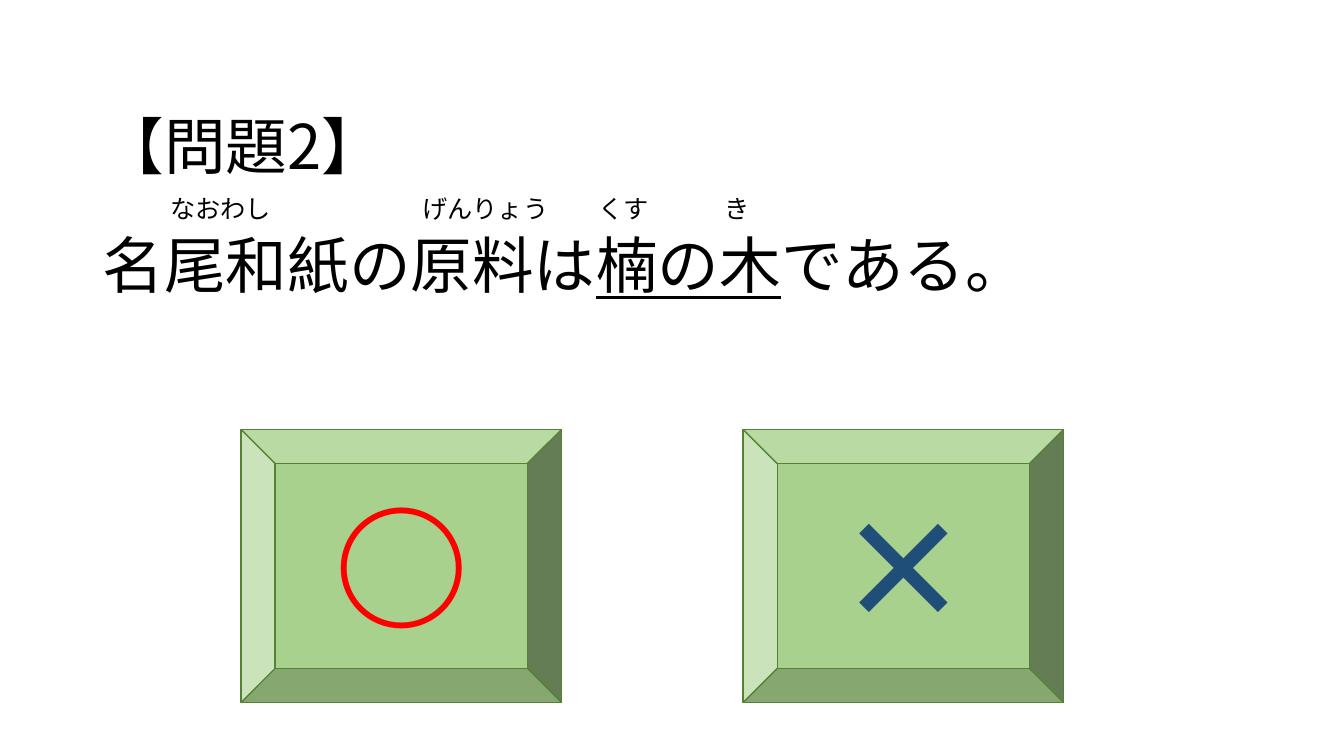
from dataclasses import dataclass

from lxml import etree
from pptx import Presentation
from pptx import util as u
from pptx.dml.color import RGBColor
from pptx.enum import shapes, text
from pptx.oxml.ns import qn

CELL = 0.25  # grid pitch in inches, one furigana character wide


@dataclass(frozen=True)
class Theme:
    font: str = "Noto Sans CJK JP"
    ink: str = "000000"
    button: str = "A9D18E"
    border: str = "548235"
    right: str = "FF0000"
    wrong: str = "1F4E79"
    question_size: int = 44
    kana_size: int = 18
    mark_size: int = 96
    line_gap: int = 37


@dataclass(frozen=True)
class Box:
    col: float
    row: float
    cols: float
    rows: float


@dataclass(frozen=True)
class Furigana:
    kana: str
    offset: int  # characters from the start of the reading line


@dataclass(frozen=True)
class Button:
    mark: str
    color: str
    col: float


THEME = Theme()
QUESTION = Box(3.68, 1.6, 46, 13.4)
READING_COL, READING_ROW = 4.36, 7.48
SENTENCE = [("名尾和紙の原料は", False), ("楠の木", True), ("である。", False)]
READINGS = [Furigana("なおわし", 2), Furigana("げんりょう", 12),
            Furigana("くす", 19), Furigana("き", 24)]
BUTTONS = [Button("×", THEME.wrong, 29.48), Button("○", THEME.right, 9.56)]


def grid(n: float) -> u.Length:
    return u.Inches(n * CELL)


def place(box: Box) -> list[u.Length]:
    return [grid(n) for n in (box.col, box.row, box.cols, box.rows)]


def style(r, size: int, color: str, bold: bool = False) -> None:
    """Format a run, with the same font for Latin and East Asian text."""
    r.font.size = u.Pt(size)
    r.font.bold = bold
    r.font.name = THEME.font
    r.font.color.rgb = RGBColor.from_string(color)
    ea = etree.SubElement(r.font._element, qn("a:ea"))
    ea.set("typeface", THEME.font)


def add_question(s) -> None:
    tf = s.shapes.add_textbox(*place(QUESTION)).text_frame
    tf.word_wrap = True
    tf.vertical_anchor = text.MSO_ANCHOR.MIDDLE
    heading, p = tf.paragraphs[0], tf.add_paragraph()
    heading.text = "【問題2】"
    p.space_before = u.Pt(THEME.line_gap)
    for words, underlined in SENTENCE:
        r = p.add_run()
        r.text = words
        r.font.underline = underlined
    for line in (heading, p):
        line.line_spacing = 0.9
        for r in line.runs:
            style(r, THEME.question_size, THEME.ink)


def add_furigana(s, reading: Furigana) -> None:
    box = Box(READING_COL + reading.offset, READING_ROW,
              len(reading.kana) + 1, 1.6)
    tf = s.shapes.add_textbox(*place(box)).text_frame
    tf.word_wrap = False
    tf.text = reading.kana
    style(tf.paragraphs[0].runs[0], THEME.kana_size, THEME.ink)


def add_button(s, button: Button) -> None:
    box = Box(button.col, 17.04, 12.72, 10.84)
    sp = s.shapes.add_shape(shapes.MSO_SHAPE.BEVEL, *place(box))
    sp.shadow.inherit = False
    sp.fill.solid()
    sp.fill.fore_color.rgb = RGBColor.from_string(THEME.button)
    sp.line.color.rgb = RGBColor.from_string(THEME.border)
    sp.line.width = u.Pt(1)
    tf = sp.text_frame
    tf.text = button.mark
    tf.vertical_anchor = text.MSO_ANCHOR.MIDDLE
    p = tf.paragraphs[0]
    p.alignment = text.PP_ALIGN.CENTER
    style(p.runs[0], THEME.mark_size, button.color, bold=True)


def main() -> None:
    prs = Presentation()
    prs.slide_width, prs.slide_height = u.Inches(13.33), u.Inches(7.5)
    s = prs.slides.add_slide(prs.slide_layouts[6])
    add_question(s)
    for button in BUTTONS:
        add_button(s, button)
    for reading in READINGS:
        add_furigana(s, reading)
    prs.save("out.pptx")


if __name__ == "__main__":
    main()
